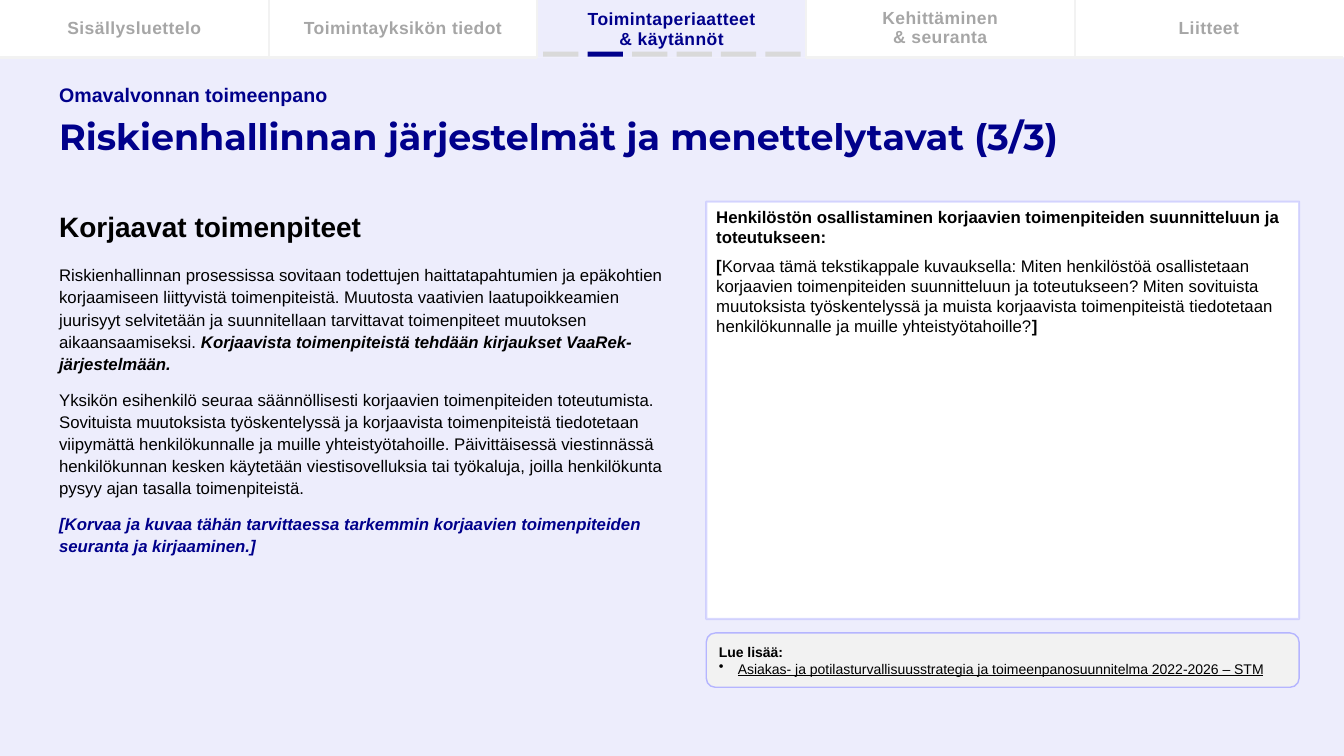
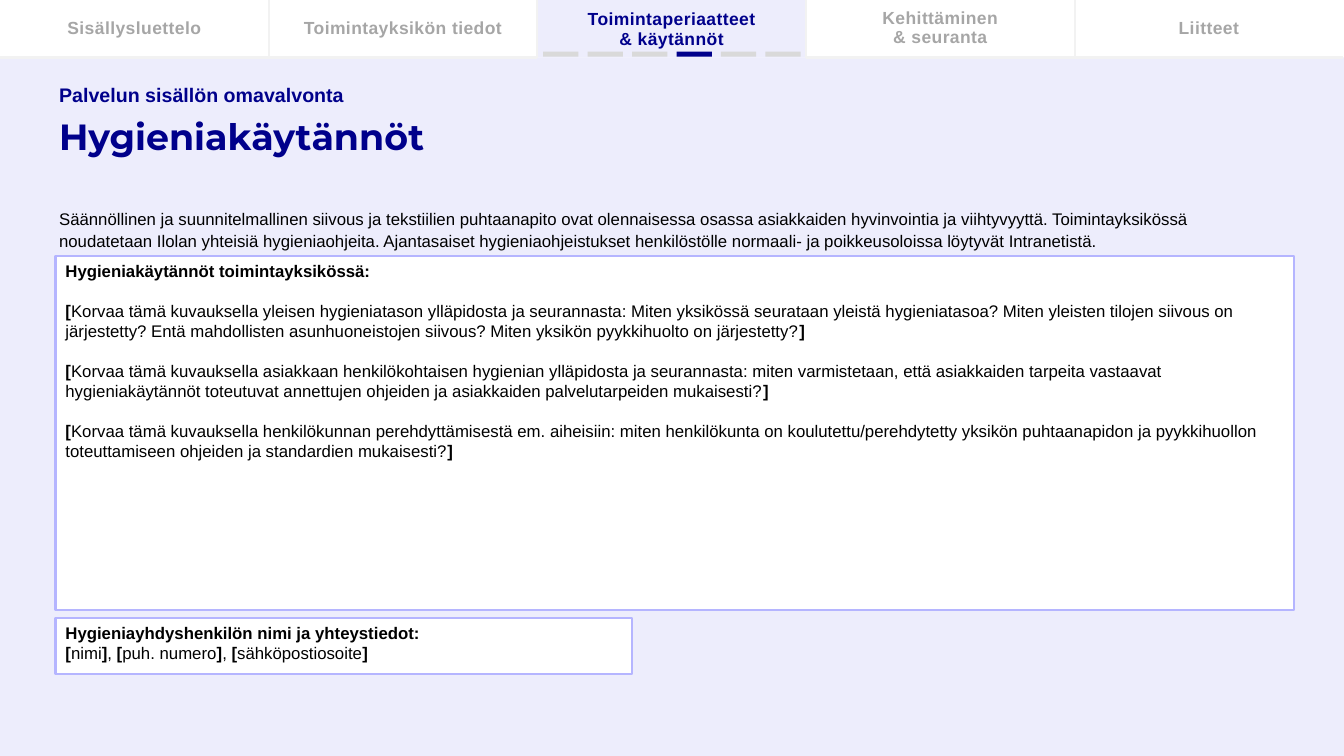
"""Build two slides of a self-monitoring plan with a shared tab header."""
import pptx
import pptx.util
import pptx.dml.color
import pptx.enum.shapes
import pptx.enum.text
import pptx.oxml.ns
import pptx.oxml.xmlchemy

Cm, Pt = pptx.util.Cm, pptx.util.Pt
kinds = pptx.enum.shapes.MSO_SHAPE
anchor = pptx.enum.text.MSO_ANCHOR
align = pptx.enum.text.PP_ALIGN
qn = pptx.oxml.ns.qn
node = pptx.oxml.xmlchemy.OxmlElement
hues = {"page": "EDEDFC", "white": "FFFFFF", "navy": "00008B", "ink": "000000",
        "dim": "A6A6A6", "rule": "F2F2F2", "tick": "D9D9D9", "edge": "B5B5FF"}
rgb = {name: pptx.dml.color.RGBColor.from_string(code) for name, code in hues.items()}


def block(shapes, place, kind=None, fill=None, edge=None):
    area = [Cm(n) for n in place]
    if kind is None:
        shape = shapes.add_textbox(*area)
    else:
        shape = shapes.add_shape(kind, *area)
        shape.shadow.inherit = False
        shape.fill.solid()
        shape.fill.fore_color.rgb = rgb[fill]
        if edge:
            shape.line.color.rgb = rgb["edge"]
            shape.line.width = Pt(edge)
        else:
            shape.line.fill.background()
    shape.text_frame.word_wrap = True
    shape.text_frame.vertical_anchor = anchor.TOP
    return shape


def write(shape, paras, size=12, hue="ink", face="Arial", lead=1.0, side=align.LEFT):
    frame = shape.text_frame
    for spot, (gap, runs) in enumerate(paras):
        para = frame.add_paragraph() if spot else frame.paragraphs[0]
        para.alignment = side
        para.line_spacing = lead
        para.space_before = Pt(gap)
        for text, marks in runs:
            run = para.add_run()
            run.text = text
            run.font.name = face
            run.font.size = Pt(20 if "h" in marks else size)
            run.font.bold = "b" in marks
            run.font.italic = "i" in marks
            run.font.underline = "u" in marks
            run.font.color.rgb = rgb["navy" if "n" in marks else hue]
    return frame


deck = pptx.Presentation()
deck.slide_width, deck.slide_height = Cm(33.87), Cm(19.05)
back = deck.slide_master.background.fill
back.solid()
back.fore_color.rgb = rgb["page"]

wide, high = 6.77, 1.45
left = 1.24
tabs = [["Sisällysluettelo"], ["Toimintayksikön tiedot"],
        ["Toimintaperiaatteet", "& käytännöt"],
        ["Kehittäminen", "& seuranta"], ["Liitteet"]]
now = 2
rules = [(n * wide, 0, n * wide, high) for n in range(1, 5)]
rules += [(0, high, now * wide, high), ((now + 1) * wide, high, 5 * wide, high)]
pages = [("Omavalvonnan toimeenpano",
          "Riskienhallinnan järjestelmät ja menettelytavat (3/3)", 1),
         ("Palvelun sisällön omavalvonta", "Hygieniakäytännöt", 3)]
slides = []

for topic, title, step in pages:
    slide = deck.slides.add_slide(deck.slide_layouts[6])
    slides.append(slide)
    block(slide.shapes, (0, 0, 33.87, high), kinds.RECTANGLE, "white")
    block(slide.shapes, (now * wide, 0, wide, high), kinds.RECTANGLE, "page")
    for spot, lines in enumerate(tabs):
        tab = block(slide.shapes, (spot * wide, 0, wide, 1.47 if spot == now else 1.4))
        frame = write(tab, [(0, [(line, "b")]) for line in lines], 12.5,
                      "navy" if spot == now else "dim", lead=Pt(14), side=align.CENTER)
        frame.vertical_anchor = anchor.MIDDLE
        for para in frame.paragraphs:
            para.runs[0]._r.get_or_add_rPr().set("spc", "30")
    for ends in rules:
        rule = slide.shapes.add_connector(
            pptx.enum.shapes.MSO_CONNECTOR.STRAIGHT, *[Cm(n) for n in ends])
        rule.line.color.rgb = rgb["rule"]
        rule.line.width = Pt(1.5)
        rule._element.spPr.append(node("a:effectLst"))
    ticks = slide.shapes.add_group_shape()
    for spot in range(6):
        block(ticks.shapes, (13.69 + 1.12 * spot, 1.3, 0.89, 0.13), kinds.RECTANGLE,
              "navy" if spot == step else "tick")
    label = block(slide.shapes, (left, 2.08, 20, 0.61))
    frame = write(label, [(0, [(topic, "b")])], 14, "navy")
    frame.margin_top = frame.margin_bottom = 0
    frame.vertical_anchor = anchor.MIDDLE
    head = block(slide.shapes, (left, 2.29, 31.37, 2.41))
    frame = write(head, [(0, [(title, "b")])], 26, "navy", "Montserrat", 0.9)
    frame.vertical_anchor = anchor.MIDDLE

risk, clean = [slide.shapes for slide in slides]

body = block(risk, (left, 5.08, 16.26, 11.91))
write(body, [
    (0, [("Korjaavat toimenpiteet", "bh")]),
    (14, [("Riskienhallinnan prosessissa sovitaan todettujen haittatapahtumien ja "
           "epäkohtien korjaamiseen liittyvistä toimenpiteistä. Muutosta vaativien "
           "laatupoikkeamien juurisyyt selvitetään ja suunnitellaan tarvittavat "
           "toimenpiteet muutoksen aikaansaamiseksi. ", ""),
          ("Korjaavista toimenpiteistä tehdään kirjaukset VaaRek-järjestelmään.", "bi")]),
    (9.7, [("Yksikön esihenkilö seuraa säännöllisesti korjaavien toimenpiteiden "
            "toteutumista. Sovituista muutoksista työskentelyssä ja korjaavista "
            "toimenpiteistä tiedotetaan viipymättä henkilökunnalle ja muille "
            "yhteistyötahoille. Päivittäisessä viestinnässä henkilökunnan kesken "
            "käytetään viestisovelluksia tai työkaluja, joilla henkilökunta pysyy "
            "ajan tasalla toimenpiteistä.", "")]),
    (9.7, [("[Korvaa ja kuvaa tähän tarvittaessa tarkemmin korjaavien toimenpiteiden "
            "seuranta ja kirjaaminen.]", "bin")])], lead=1.1)

staff = block(risk, (17.8, 5.08, 14.94, 10.52), kinds.RECTANGLE, "white", 1.5)
tint = staff._element.spPr.find(qn("a:ln")).find(".//" + qn("a:srgbClr"))
fade = node("a:alpha")
fade.set("val", "50000")
tint.append(fade)
write(staff, [
    (0, [("Henkilöstön osallistaminen korjaavien toimenpiteiden suunnitteluun ja "
          "toteutukseen:", "b")]),
    (6, [("[", "b"),
         ("Korvaa tämä tekstikappale kuvauksella: Miten henkilöstöä osallistetaan "
          "korjaavien toimenpiteiden suunnitteluun ja toteutukseen? Miten sovituista "
          "muutoksista työskentelyssä ja muista korjaavista toimenpiteistä tiedotetaan "
          "henkilökunnalle ja muille yhteistyötahoille?", ""),
         ("]", "b")])])

more = block(risk, (17.8, 15.95, 14.94, 1.37), kinds.ROUNDED_RECTANGLE, "rule", 1)
frame = write(more, [
    (0, [("Lue lisää:", "b")]),
    (0, [("Asiakas- ja potilasturvallisuusstrategia ja toimeenpanosuunnitelma "
          "2022-2026 – STM", "u")])], 10)
frame.vertical_anchor = anchor.MIDDLE
props = frame.paragraphs[1]._p.get_or_add_pPr()
props.set("marL", str(Cm(0.48)))
props.set("indent", str(-Cm(0.48)))
mark = node("a:buChar")
mark.set("char", "•")
props.append(mark)

intro = block(clean, (left, 5.08, 31.37, 1.4))
write(intro, [(0, [(
    "Säännöllinen ja suunnitelmallinen siivous ja tekstiilien puhtaanapito ovat "
    "olennaisessa osassa asiakkaiden hyvinvointia ja viihtyvyyttä. Toimintayksikössä "
    "noudatetaan Ilolan yhteisiä hygieniaohjeita. Ajantasaiset hygieniaohjeistukset "
    "henkilöstölle normaali- ja poikkeusoloissa löytyvät Intranetistä.", "")])], lead=1.1)

asks = [
    "Korvaa tämä kuvauksella yleisen hygieniatason ylläpidosta ja seurannasta: Miten "
    "yksikössä seurataan yleistä hygieniatasoa? Miten yleisten tilojen siivous on "
    "järjestetty? Entä mahdollisten asunhuoneistojen siivous? Miten yksikön "
    "pyykkihuolto on järjestetty?",
    "Korvaa tämä kuvauksella asiakkaan henkilökohtaisen hygienian ylläpidosta ja "
    "seurannasta: miten varmistetaan, että asiakkaiden tarpeita vastaavat "
    "hygieniakäytännöt toteutuvat annettujen ohjeiden ja asiakkaiden "
    "palvelutarpeiden mukaisesti?",
    "Korvaa tämä kuvauksella henkilökunnan perehdyttämisestä em. aiheisiin: miten "
    "henkilökunta on koulutettu/perehdytetty yksikön puhtaanapidon ja pyykkihuollon "
    "toteuttamiseen ohjeiden ja standardien mukaisesti?"]
habits = block(clean, (1.4, 6.45, 31.22, 8.92), kinds.RECTANGLE, "white", 1.5)
write(habits, [(0, [("Hygieniakäytännöt toimintayksikössä:", "b")])]
      + [(14, [("[", "b"), (ask, ""), ("]", "b")]) for ask in asks])

contact = block(clean, (1.4, 15.57, 14.53, 1.42), kinds.RECTANGLE, "white", 1.5)
runs = []
for field in ("nimi", "puh. numero", "sähköpostiosoite"):
    if runs:
        runs.append((", ", ""))
    runs += [("[", "b"), (field, ""), ("]", "b")]
write(contact, [(0, [("Hygieniayhdyshenkilön nimi ja yhteystiedot:", "b")]), (0, runs)])

deck.save("out.pptx")
